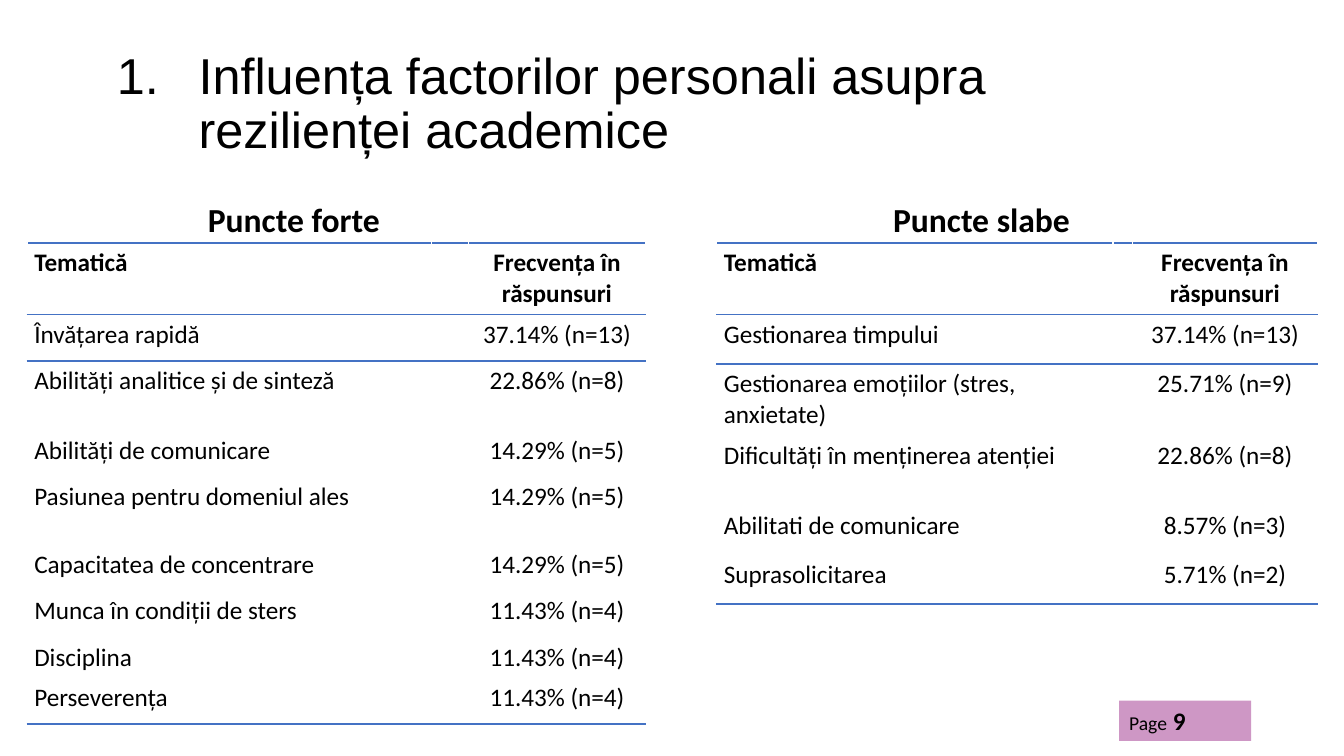
from lxml import etree
from pptx import Presentation
from pptx import util as u
from pptx.dml.color import RGBColor
from pptx.enum import shapes, text
from pptx.oxml.ns import qn

PX = 9144
LEFT, CENTER = text.PP_ALIGN.LEFT, text.PP_ALIGN.CENTER
STRENGTHS = [
    ("Tematică", "Frecvența în răspunsuri"),
    ("Învățarea rapidă", "37.14% (n=13)"),
    ("Abilități analitice și de sinteză", "22.86% (n=8)"),
    ("Abilități de comunicare", "14.29% (n=5)"),
    ("Pasiunea pentru domeniul ales", "14.29% (n=5)"),
    ("Capacitatea de concentrare", "14.29% (n=5)"),
    ("Munca în condiții de sters", "11.43% (n=4)"),
    ("Disciplina", "11.43% (n=4)"),
    ("Perseverența", "11.43% (n=4)"),
]
WEAKNESSES = [
    STRENGTHS[0],
    ("Gestionarea timpului", "37.14% (n=13)"),
    ("Gestionarea emoțiilor (stres, anxietate)", "25.71% (n=9)"),
    ("Dificultăți în menținerea atenției", "22.86% (n=8)"),
    ("Abilitati de comunicare", "8.57% (n=3)"),
    ("Suprasolicitarea", "5.71% (n=2)"),
]


def color(value):
    return RGBColor.from_string(value)


def px(*lengths):
    return [u.Emu(length * PX) for length in lengths]


class ComparisonSlide:
    """Builds a comparison slide in one consistent style."""

    ink, rule, accent = "000000", "4472C4", "9F318D"
    title_font, body_font = "Arial", "Calibri"

    def __init__(self, deck):
        self.slide = deck.slides.add_slide(deck.slide_layouts[4])
        self.holders = {p.placeholder_format.idx: p for p in self.slide.placeholders}
        for content in (2, 4):
            element = self.holders[content].element
            element.getparent().remove(element)

    def style(self, font, size, bold=False, name=body_font):
        font.name, font.size, font.bold = name, u.Pt(size), bold
        font.color.rgb = color(self.ink)

    def fill_placeholder(self, idx, box, words, anchor, spacing, align):
        holder = self.holders[idx]
        holder.left, holder.top, holder.width, holder.height = px(*box)
        frame = holder.text_frame
        frame.text = words
        frame.auto_size = text.MSO_AUTO_SIZE.NONE
        frame.vertical_anchor = anchor
        paragraph = frame.paragraphs[0]
        paragraph.alignment = align
        paragraph.line_spacing = spacing
        paragraph.space_before = u.Pt(0)
        return paragraph

    def title(self, box, words):
        paragraph = self.fill_placeholder(0, box, words, text.MSO_ANCHOR.MIDDLE, 0.9, LEFT)
        properties = paragraph._p.get_or_add_pPr()
        indent = 81 * PX
        properties.set("marL", str(indent))
        properties.set("indent", str(-indent))
        etree.SubElement(properties, qn("a:buFont"), typeface="+mj-lt")
        etree.SubElement(properties, qn("a:buAutoNum"), type="arabicPeriod")
        self.style(paragraph.font, 36, name=self.title_font)

    def heading(self, idx, box, words):
        paragraph = self.fill_placeholder(idx, box, words, text.MSO_ANCHOR.BOTTOM, 0.8, CENTER)
        self.style(paragraph.font, 24, True)

    def border(self, cell, sides):
        properties = cell._tc.get_or_add_tcPr()
        for position, side in enumerate(sides):
            line = etree.Element(qn(f"a:ln{side}"), w=str(u.Pt(1.5)))
            fill = etree.SubElement(line, qn("a:solidFill"))
            etree.SubElement(fill, qn("a:srgbClr"), val=self.rule)
            properties.insert(position, line)

    def table(self, left, top, widths, heights, entries):
        frame = self.slide.shapes.add_table(
            len(heights), len(widths), *px(left, top, sum(widths), sum(heights)))
        table = frame.table
        table.first_row = table.horz_banding = False
        for column, width in zip(table.columns, px(*widths)):
            column.width = width
        last = len(entries) - 1
        for r, ((theme, frequency), height) in enumerate(zip(entries, px(*heights))):
            table.rows[r].height = height
            sides = {0: "TB", 1: "T", last: "B"}.get(r, "")
            for c, words in enumerate((theme, "", frequency)):
                cell = table.cell(r, c)
                cell.fill.background()
                cell.margin_left, cell.margin_right = px(7, 7)
                cell.margin_top, cell.margin_bottom = px(5, 5)
                cell.text = words
                paragraph = cell.text_frame.paragraphs[0]
                paragraph.alignment = CENTER if c == 2 else LEFT
                self.style(paragraph.font, 18, r == 0)
                self.border(cell, sides)

    def page_tag(self, box, label, number):
        tag = self.slide.shapes.add_shape(shapes.MSO_SHAPE.RECTANGLE, *px(*box))
        tag.shadow.inherit = False
        tag.line.fill.background()
        tag.fill.solid()
        tag.fill.fore_color.rgb = color(self.accent)
        shade = tag.element.spPr.find(f"{qn('a:solidFill')}/{qn('a:srgbClr')}")
        etree.SubElement(shade, qn("a:alpha"), val="50000")
        paragraph = tag.text_frame.paragraphs[0]
        paragraph.alignment = LEFT
        for words, size, bold in ((label, 14, False), (f" {number}", 18, True)):
            run = paragraph.add_run()
            run.text = words
            self.style(run.font, size, bold)


def main():
    deck = Presentation()
    deck.slide_width, deck.slide_height = px(1333, 750)
    page = ComparisonSlide(deck)
    page.title((106, 32, 988, 145), "Influența factorilor personali asupra rezilienței academice")
    page.heading(1, (73, 188, 437, 54), "Puncte forte")
    page.table(27, 241, (401, 37, 175), (69, 46, 69, 46, 67, 46, 46, 38, 46), STRENGTHS)
    page.heading(3, (724, 199, 499, 43), "Puncte slabe")
    page.table(711, 241, (393, 19, 184), (69, 49, 69, 69, 49, 49), WEAKNESSES)
    page.page_tag((1110, 695, 131, 40), "Page", 9)
    deck.save("out.pptx")


if __name__ == "__main__":
    main()
